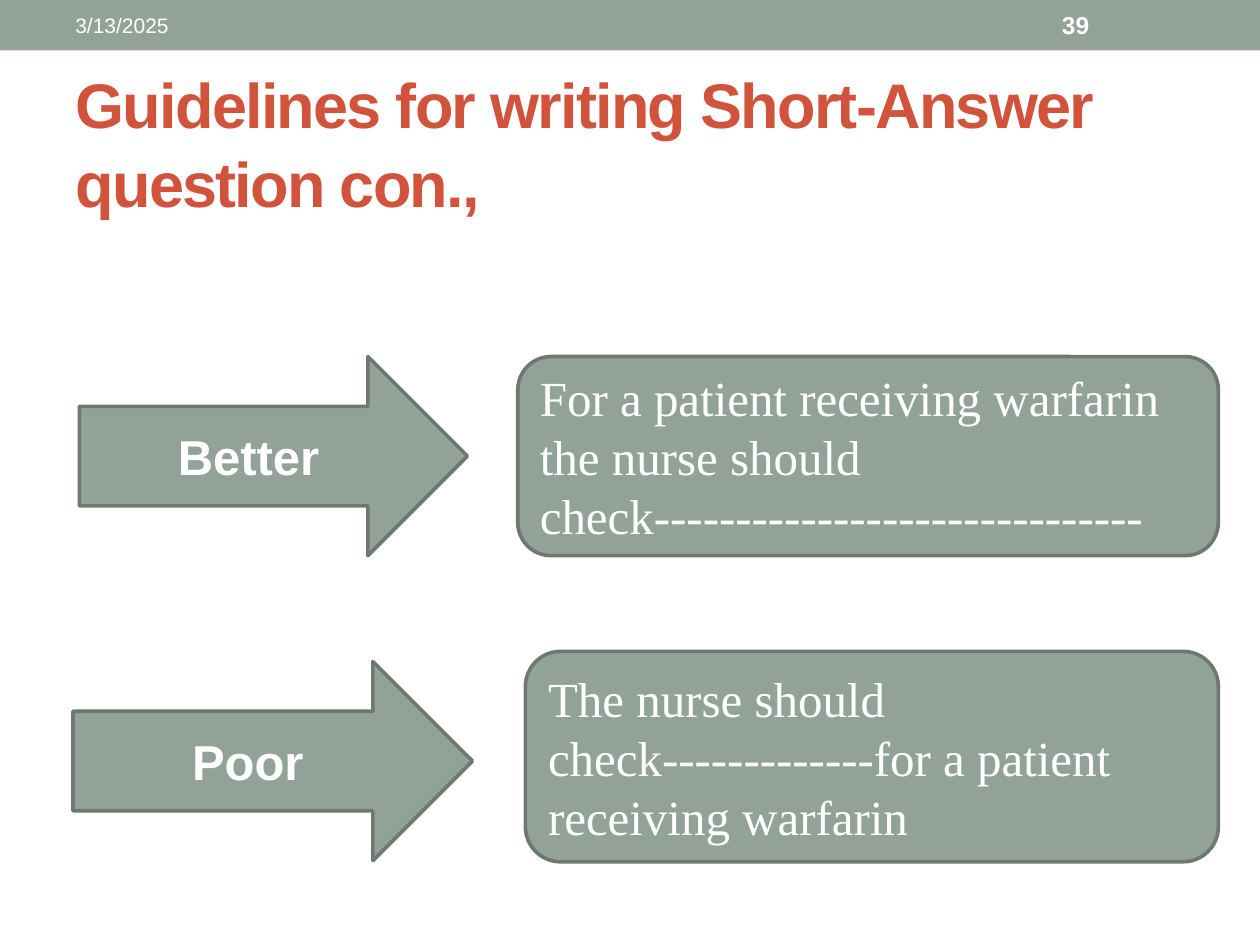
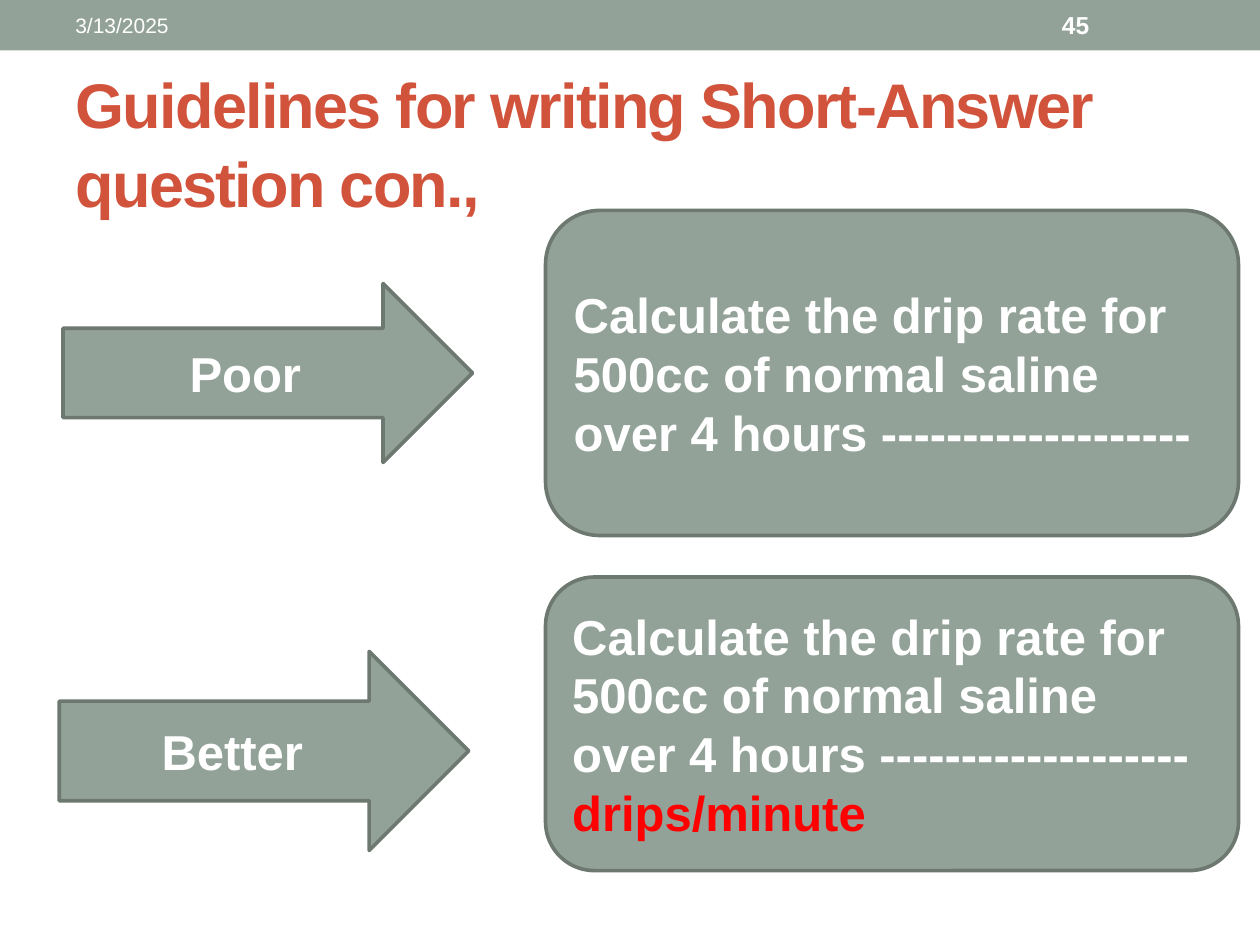
from pptx import Presentation
from pptx.dml.color import RGBColor
from pptx.enum.shapes import MSO_SHAPE
from pptx.enum.text import MSO_ANCHOR, MSO_AUTO_SIZE, PP_ALIGN
from pptx.util import Inches, Pt

SAGE = RGBColor(0x93, 0xA2, 0x99)
DARK_SAGE = RGBColor(0x6D, 0x78, 0x71)
RUST = RGBColor(0xD2, 0x53, 0x3C)
WHITE = RGBColor(0xFF, 0xFF, 0xFF)
RED = RGBColor(0xFF, 0x00, 0x00)
SANS, SERIF = "Arial", "Times New Roman"

TITLE = "Guidelines for writing Short-Answer question con.,"
DATE = "3/13/2025"
DRIP = "Calculate the drip rate for 500cc of normal saline over 4 hours " + "-" * 19
WARFARIN_END = "For a patient receiving warfarin the nurse should check" + "-" * 30
WARFARIN_MID = "The nurse should check" + "-" * 13 + "for a patient receiving warfarin"

SLIDES = [
    ("39", SERIF, False, [
        ("Better", (0.63, 2.83, 3.08, 1.58), (4.11, 2.83, 5.56, 1.58), [(WARFARIN_END, WHITE)]),
        ("Poor", (0.58, 5.25, 3.17, 1.58), (4.17, 5.17, 5.5, 1.67), [(WARFARIN_MID, WHITE)]),
    ]),
    ("45", SANS, True, [
        ("Poor", (0.5, 2.25, 3.25, 1.42), (4.33, 1.67, 5.5, 2.58), [(DRIP, WHITE)]),
        ("Better ", (0.47, 5.17, 3.25, 1.58), (4.33, 4.58, 5.5, 2.33),
         [(DRIP, WHITE), ("drips/minute", RED)]),
    ]),
]


def write(sp, runs, size, font=SANS, bold=False, align=PP_ALIGN.LEFT):
    tf = sp.text_frame
    tf.word_wrap = True
    tf.auto_size = MSO_AUTO_SIZE.NONE
    tf.vertical_anchor = MSO_ANCHOR.MIDDLE
    p = tf.paragraphs[0]
    p.alignment = align
    for text, color in runs:
        r = p.add_run()
        r.text = text
        r.font.name, r.font.size, r.font.bold = font, Pt(size), bold
        r.font.color.rgb = color
    return p


def add_block(s, kind, box, line=True):
    sp = s.shapes.add_shape(kind, *map(Inches, box))
    sp.shadow.inherit = False
    sp.fill.solid()
    sp.fill.fore_color.rgb = SAGE
    if line:
        sp.line.color.rgb = DARK_SAGE
        sp.line.width = Pt(2.08)
    else:
        sp.line.fill.background()
    return sp


prs = Presentation()
prs.slide_width, prs.slide_height = Inches(10), Inches(7.5)

for number, font, bold, pairs in SLIDES:
    s = prs.slides.add_slide(prs.slide_layouts[5])
    add_block(s, MSO_SHAPE.RECTANGLE, (0, 0, 10, 0.4), line=False)

    title = s.shapes.title
    title.left, title.top, title.width, title.height = map(Inches, (0.5, 0.58, 9, 1.08))
    p = write(title, [(TITLE, RUST)], 36, bold=True)
    p.line_spacing = 1.04
    p.runs[0].font._element.set("spc", "-100")

    for label, arrow_box, answer_box, runs in pairs:
        answer = add_block(s, MSO_SHAPE.ROUNDED_RECTANGLE, answer_box)
        write(answer, runs, 28, font, bold)
        arrow = add_block(s, MSO_SHAPE.RIGHT_ARROW, arrow_box)
        write(arrow, [(label, WHITE)], 28, bold=True, align=PP_ALIGN.CENTER)

    for text, left, width, size, strong in ((DATE, 0.5, 3.17, 12, False),
                                            (number, 8.33, 1.17, 14, True)):
        sp = s.shapes.add_textbox(Inches(left), Inches(0.02), Inches(width), Inches(0.36))
        write(sp, [(text, WHITE)], size, bold=strong)

prs.save("out.pptx")
